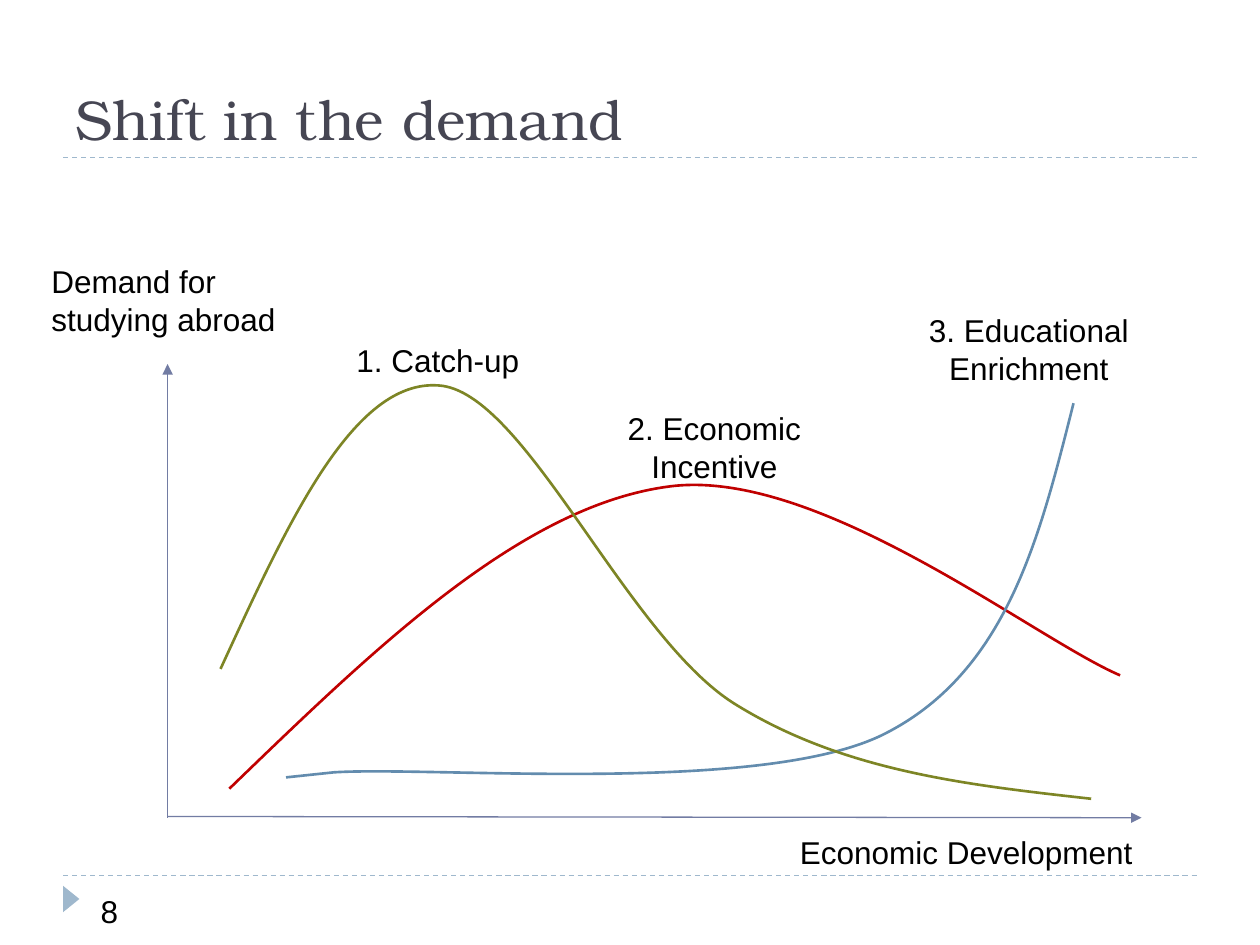
from lxml import etree
from pptx import Presentation
from pptx.dml.color import RGBColor
from pptx.enum.dml import MSO_LINE_DASH_STYLE as DASH
from pptx.enum.shapes import MSO_CONNECTOR as CONN, MSO_SHAPE as SHAPE
from pptx.enum.text import MSO_ANCHOR as ANCHOR, PP_ALIGN as ALIGN
from pptx.oxml.ns import qn
from pptx.util import Inches, Pt

THEME = {
    "title": "464653", "text": "000000", "rule": "9FB8CD", "axis": "727CA3",
    "red": "C00000", "blue": "638CAE", "green": "7D8525",
    "title_font": "TeX Gyre Bonum", "body_font": "Arial",
    "title_size": 32, "body_size": 18, "thin": 0.75, "thick": 1.5,
}

# Text, box (left, top, width, height), alignment
PAGE_NUMBER = ("8", (0.7, 7.03, 1.33, 0.4), ALIGN.LEFT)
AXIS_LABELS = [
    ("Economic Development", (6.25, 6.56, 3.13, 0.4), ALIGN.LEFT),
    ("Demand for studying abroad", (0.31, 2.03, 2.27, 0.71), ALIGN.LEFT),
]
CURVE_LABELS = [
    ("1. Catch-up", (2.73, 2.66, 1.72, 0.4), ALIGN.LEFT),
    ("2. Economic Incentive", (4.77, 3.2, 1.8, 0.71), ALIGN.CENTER),
    ("3. Educational Enrichment", (7.11, 2.42, 2.11, 0.71), ALIGN.CENTER),
]
RULES_Y = [6.95, 1.25]
AXES = [((1.33, 6.48), (9.06, 6.49)), ((1.33, 6.49), (1.33, 2.89))]

# Colour, start point, segments: one point is a line, three are a Bezier
CURVES = [
    ("red", (1.82, 6.26), [
        [(2.98, 5.14), (4.14, 4.01), (5.32, 3.86)],
        [(6.5, 3.71), (8.21, 5.07), (8.89, 5.36)]]),
    ("blue", (2.27, 6.17), [
        [(2.65, 6.13)],
        [(3.44, 6.08), (6.04, 6.31), (7.01, 5.83)],
        [(7.99, 5.34), (8.25, 4.27), (8.52, 3.2)]]),
    ("green", (1.75, 5.31), [
        [(2.28, 4.16), (2.8, 3.01), (3.48, 3.06)],
        [(4.16, 3.1), (4.96, 5.03), (5.82, 5.58)],
        [(6.68, 6.12), (7.67, 6.23), (8.66, 6.34)]]),
]


def color(name):
    return RGBColor.from_string(THEME[name])


def add_text(slide, text, box, align=ALIGN.LEFT, *, font="body_font",
             size="body_size", fill="text", anchor=ANCHOR.TOP):
    tf = slide.shapes.add_textbox(*map(Inches, box)).text_frame
    tf.word_wrap = True
    tf.vertical_anchor = anchor
    p = tf.paragraphs[0]
    p.alignment = align
    r = p.add_run()
    r.text = text
    r.font.name = THEME[font]
    r.font.size = Pt(THEME[size])
    r.font.color.rgb = color(fill)


def add_line(slide, start, end, stroke, dash=None, arrow=False):
    line = slide.shapes.add_connector(CONN.STRAIGHT, *map(Inches, start + end))
    line.line.color.rgb = color(stroke)
    line.line.width = Pt(THEME["thin"])
    if dash:
        line.line.dash_style = dash
    sp_pr = line._element.spPr
    if arrow:
        etree.SubElement(sp_pr.find(qn("a:ln")), qn("a:tailEnd"), type="triangle")
    etree.SubElement(sp_pr, qn("a:effectLst"))


def bend(sp, segments):
    """Turn each run of three straight steps into one cubic Bezier."""
    steps = iter(list(sp._element.iter(qn("a:lnTo"))))
    for segment in segments:
        group = [next(steps) for _ in segment]
        if len(group) == 3:
            cubic = etree.Element(qn("a:cubicBezTo"))
            group[0].addprevious(cubic)
            for step in group:
                cubic.append(step[0])
                step.getparent().remove(step)


def add_curve(slide, stroke, start, segments):
    fb = slide.shapes.build_freeform(*map(Inches, start))
    points = [(Inches(x), Inches(y)) for segment in segments for x, y in segment]
    fb.add_line_segments(points, close=False)
    sp = fb.convert_to_shape()
    bend(sp, segments)
    sp.shadow.inherit = False
    sp.fill.background()
    sp.line.color.rgb = color(stroke)
    sp.line.width = Pt(THEME["thick"])


def add_page_marker(slide):
    sp = slide.shapes.add_shape(SHAPE.ISOSCELES_TRIANGLE,
                                *map(Inches, (0.46, 7.07, 0.21, 0.13)))
    sp.rotation = 90
    sp.shadow.inherit = False
    sp.fill.solid()
    sp.fill.fore_color.rgb = color("rule")
    sp.line.fill.background()


def main():
    prs = Presentation()
    prs.slide_width, prs.slide_height = Inches(10), Inches(7.5)
    slide = prs.slides.add_slide(prs.slide_layouts[6])

    for y in RULES_Y:
        add_line(slide, (0.5, y), (9.5, y), "rule", dash=DASH.DASH)
    add_page_marker(slide)
    add_text(slide, *PAGE_NUMBER)
    add_text(slide, "Shift in the demand", (0.5, 0.17, 9, 1.08), font="title_font",
             size="title_size", fill="title", anchor=ANCHOR.BOTTOM)
    for start, end in AXES:
        add_line(slide, start, end, "axis", arrow=True)
    for label in AXIS_LABELS:
        add_text(slide, *label)
    for curve in CURVES:
        add_curve(slide, *curve)
    for label in CURVE_LABELS:
        add_text(slide, *label)

    prs.save("out.pptx")


if __name__ == "__main__":
    main()
